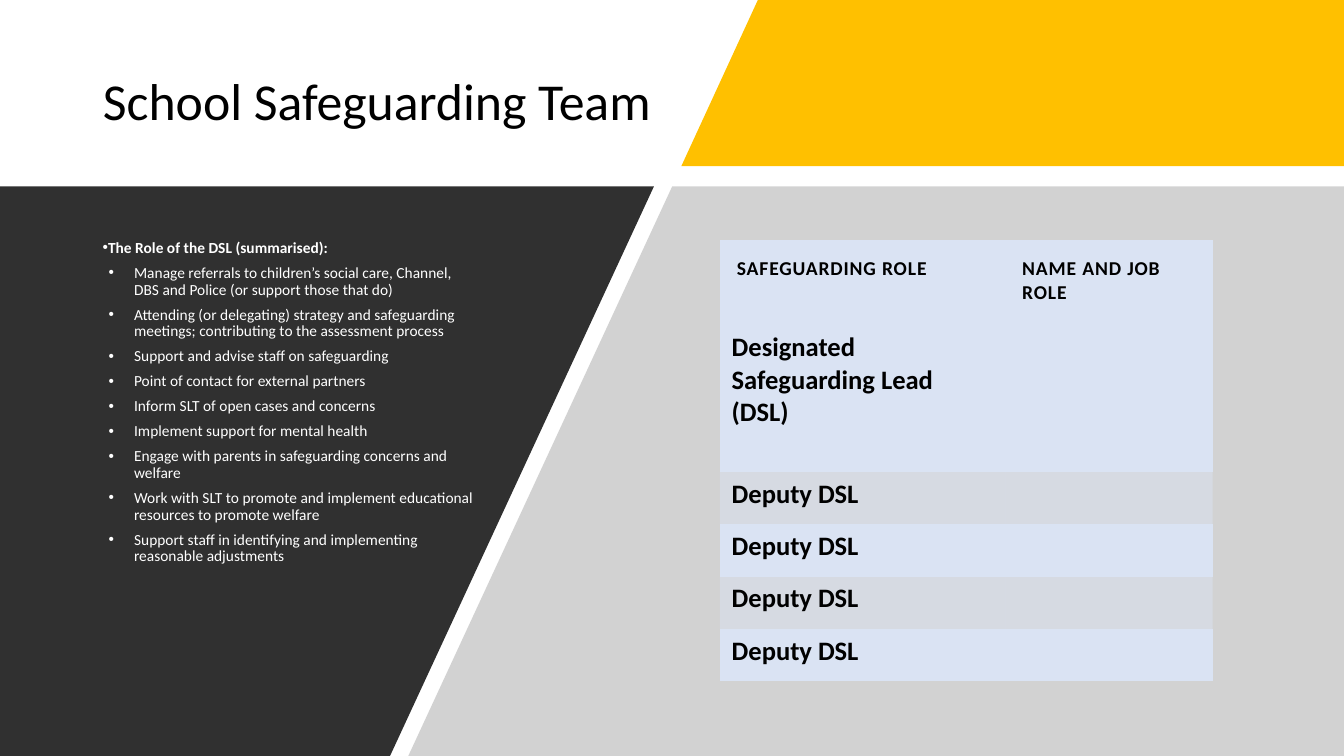
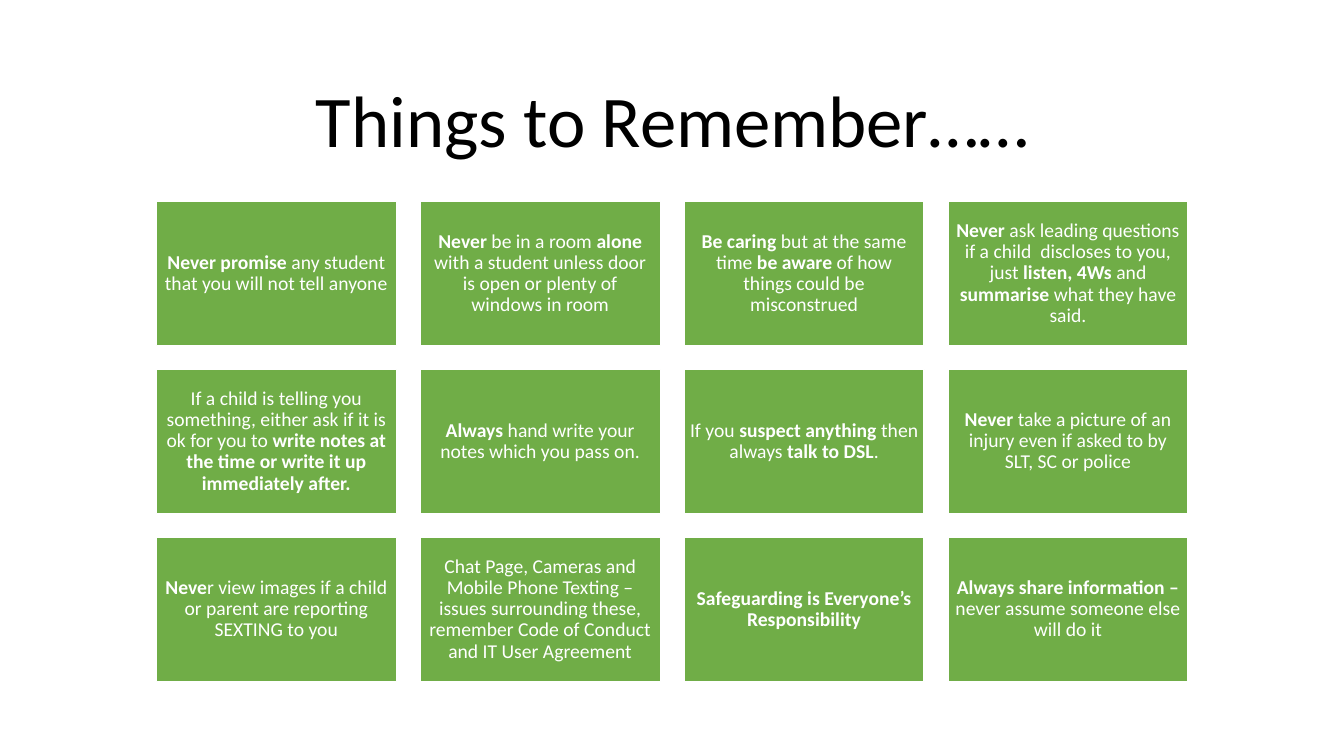
"""Build two school safeguarding slides: the team and the points to remember."""

from pptx import Presentation
from pptx.dml.color import RGBColor
from pptx.enum.shapes import MSO_SHAPE
from pptx.enum.text import MSO_ANCHOR, MSO_AUTO_SIZE, PP_ALIGN
from pptx.oxml.ns import qn
from pptx.util import Cm, Pt
from lxml.etree import SubElement

FONT = "Calibri"
COLORS = {
    "black": "000000",
    "white": "FFFFFF",
    "yellow": "FFC000",
    "grey": "A6A6A6",
    "dark": "303030",
    "pale_blue": "DAE3F3",
    "green": "70AD47",
}
WIDTH, HEIGHT = 33.87, 19.05
BAND_BOTTOM, PANEL_TOP = 4.19, 4.7
NO_STYLE = "{2D5ABB26-0587-4C30-8999-92F81FD0307C}"

TEAM_TITLE = "School Safeguarding Team"
PANELS = [
    ("yellow", None, [(19.1, 0), (WIDTH, 0), (WIDTH, BAND_BOTTOM), (17.17, BAND_BOTTOM)]),
    ("grey", 50, [(16.94, PANEL_TOP), (WIDTH, PANEL_TOP), (WIDTH, HEIGHT), (10.29, HEIGHT)]),
    ("dark", None, [(0, PANEL_TOP), (16.48, PANEL_TOP), (9.83, HEIGHT), (0, HEIGHT)]),
]
DUTIES = [
    "**The Role of the DSL (summarised):**",
    "Manage referrals to children’s social care, Channel, DBS and Police (or support those that do)",
    "Attending (or delegating) strategy and safeguarding meetings; contributing to the assessment process",
    "Support and advise staff on safeguarding",
    "Point of contact for external partners",
    "Inform SLT of open cases and concerns",
    "Implement support for mental health",
    "Engage with parents in safeguarding concerns and welfare",
    "Work with SLT to promote and implement educational resources to promote welfare",
    "Support staff in identifying and implementing reasonable adjustments",
]
DUTY_INDENTS = [0] + [0.79] * (len(DUTIES) - 1)
TEAM_ROWS = [
    ("**SAFEGUARDING ROLE**", "**NAME AND JOB ROLE**"),
    ("**Designated Safeguarding Lead (DSL)**", ""),
] + [("**Deputy DSL**", "")] * 4
COLUMN_WIDTHS = [7.19, 5.23]
ROW_HEIGHTS = [2.16, 3.68] + [1.32] * 4
TRANSLUCENT_ROWS = (2, 4)

REMINDER_TITLE = "Things to Remember……"
REMINDERS = [
    "**Never promise** any student that you will not tell anyone",
    "**Never** be in a room **alone** with a student unless door is open or plenty of windows in room",
    "**Be caring **but at the same time **be aware **of how things could be misconstrued",
    "**Never** ask leading questions if a child  discloses to you, just **listen, 4Ws** and "
    "**summarise** what they have said.",
    "If a child is telling you something, either ask if it is ok for you to "
    "**write notes at the time or write it up immediately after.**",
    "**Always** hand write your notes which you pass on.",
    "If you **suspect anything **then always **talk to DSL**.",
    "**Never** take a picture of an injury even if asked to by SLT, SC or police",
    "**Neve**r view images if a child or parent are reporting SEXTING to you",
    "Chat Page, Cameras and Mobile Phone Texting – issues surrounding these, "
    "remember Code of Conduct and IT User Agreement",
    "**Safeguarding is Everyone’s Responsibility**",
    "**Always share information – **never assume someone else will do it",
]
TILE_COLUMNS = 4
TILE_LEFT, TILE_TOP = 3.94, 5.08
TILE_WIDTH, TILE_HEIGHT, TILE_GAP = 6.05, 3.63, 0.6


def rgb(name):
    """Return the named colour."""
    return RGBColor.from_string(COLORS[name])


def paint(owner, color, opacity=None):
    """Fill a shape or cell, with an optional opacity in percent."""
    owner.fill.solid()
    owner.fill.fore_color.rgb = rgb(color)
    if opacity is not None:
        color_element = owner.fill._xPr.find(qn("a:solidFill"))[0]
        SubElement(color_element, qn("a:alpha"), val=str(opacity * 1000))


def set_margins(owner, left, top, right, bottom):
    """Set the text margins of a frame or cell in centimetres."""
    owner.margin_left, owner.margin_top = Cm(left), Cm(top)
    owner.margin_right, owner.margin_bottom = Cm(right), Cm(bottom)


def write(frame, text, *, size, color="black", align=PP_ALIGN.LEFT, line_spacing=0.9,
          space_after=0, indents=None, character_spacing=0):
    """Write lines into a frame; ** switches bold, and indents add bullets."""
    frame.word_wrap = True
    for index, line in enumerate(text.split("\n")):
        paragraph = frame.paragraphs[0] if index == 0 else frame.add_paragraph()
        paragraph.alignment = align
        paragraph.line_spacing = line_spacing
        paragraph.space_after = Pt(space_after)
        if indents:
            properties = paragraph._p.get_or_add_pPr()
            properties.set("marL", str(Cm(indents[index])))
            properties.set("indent", str(-Cm(0.64)))
            SubElement(properties, qn("a:buFont"), typeface="Arial")
            SubElement(properties, qn("a:buChar"), char="•")
        for part, piece in enumerate(line.split("**")):
            if not piece:
                continue
            run = paragraph.add_run()
            run.text = piece
            run.font.name = FONT
            run.font.size = Pt(size)
            run.font.bold = part % 2 == 1
            run.font.color.rgb = rgb(color)
            if character_spacing:
                run._r.get_or_add_rPr().set("spc", str(round(character_spacing * 100)))


def add_titled_slide(presentation, title, box, **text_format):
    """Add a title-only slide and place its title."""
    slide = presentation.slides.add_slide(presentation.slide_layouts[5])
    shape = slide.shapes.title
    shape.left, shape.top, shape.width, shape.height = map(Cm, box)
    shape.text_frame.auto_size = MSO_AUTO_SIZE.NONE
    shape.text_frame.vertical_anchor = MSO_ANCHOR.MIDDLE
    write(shape.text_frame, title, **text_format)
    return slide


def add_panel(slide, color, opacity, corners):
    """Draw a filled polygon through the corners."""
    points = [(Cm(x), Cm(y)) for x, y in corners]
    builder = slide.shapes.build_freeform(*points[0], scale=1.0)
    builder.add_line_segments(points[1:], close=True)
    shape = builder.convert_to_shape()
    shape.shadow.inherit = False
    shape.line.fill.background()
    paint(shape, color, opacity)


def add_team_table(slide):
    """Add the table of safeguarding roles."""
    table = slide.shapes.add_table(
        len(TEAM_ROWS), len(COLUMN_WIDTHS), Cm(18.14), Cm(6.05),
        Cm(sum(COLUMN_WIDTHS)), Cm(sum(ROW_HEIGHTS))).table
    table._tbl.tblPr.find(qn("a:tableStyleId")).text = NO_STYLE
    table.first_row = table.horz_banding = False
    for column, width in zip(table.columns, COLUMN_WIDTHS):
        column.width = Cm(width)
    for index, (row, height) in enumerate(zip(table.rows, ROW_HEIGHTS)):
        row.height = Cm(height)
        header = index == 0
        for cell, text in zip(row.cells, TEAM_ROWS[index]):
            paint(cell, "pale_blue", 50 if index in TRANSLUCENT_ROWS else None)
            set_margins(cell, *((0.43,) * 4 if header else (0.3, 0.15, 0.3, 0.3)))
            write(cell.text_frame, text, size=14 if header else 19, line_spacing=1.0,
                  character_spacing=0.6 if header else 0)


def add_tile(slide, index, text):
    """Add one reminder tile at its place in the grid."""
    row, column = divmod(index, TILE_COLUMNS)
    shape = slide.shapes.add_shape(
        MSO_SHAPE.RECTANGLE,
        Cm(TILE_LEFT + column * (TILE_WIDTH + TILE_GAP)),
        Cm(TILE_TOP + row * (TILE_HEIGHT + TILE_GAP)),
        Cm(TILE_WIDTH), Cm(TILE_HEIGHT))
    shape.shadow.inherit = False
    paint(shape, "green")
    shape.line.color.rgb = rgb("white")
    shape.line.width = Pt(1)
    shape.text_frame.vertical_anchor = MSO_ANCHOR.MIDDLE
    set_margins(shape.text_frame, *(0.15,) * 4)
    write(shape.text_frame, text, size=14, color="white", align=PP_ALIGN.CENTER)


def build_team_slide(presentation):
    """Build the slide with the DSL role and the team table."""
    slide = add_titled_slide(presentation, TEAM_TITLE, (2.34, 1.02, 14.83, 3.18), size=37)
    for panel in PANELS:
        add_panel(slide, *panel)
    duties = slide.shapes.add_textbox(Cm(2.34), Cm(6.05), Cm(10), Cm(10.11)).text_frame
    set_margins(duties, 0.25, 0, 0.25, 0)
    write(duties, "\n".join(DUTIES), size=11, color="white", space_after=6,
          indents=DUTY_INDENTS)
    add_team_table(slide)


def build_reminder_slide(presentation):
    """Build the slide with the grid of reminders."""
    slide = add_titled_slide(presentation, REMINDER_TITLE, (2.34, 1.55, 29.21, 3.15),
                             size=52, align=PP_ALIGN.CENTER)
    for index, text in enumerate(REMINDERS):
        add_tile(slide, index, text)


def main():
    """Create and save the presentation."""
    presentation = Presentation()
    presentation.slide_width, presentation.slide_height = Cm(WIDTH), Cm(HEIGHT)
    build_team_slide(presentation)
    build_reminder_slide(presentation)
    presentation.save("out.pptx")


if __name__ == "__main__":
    main()
